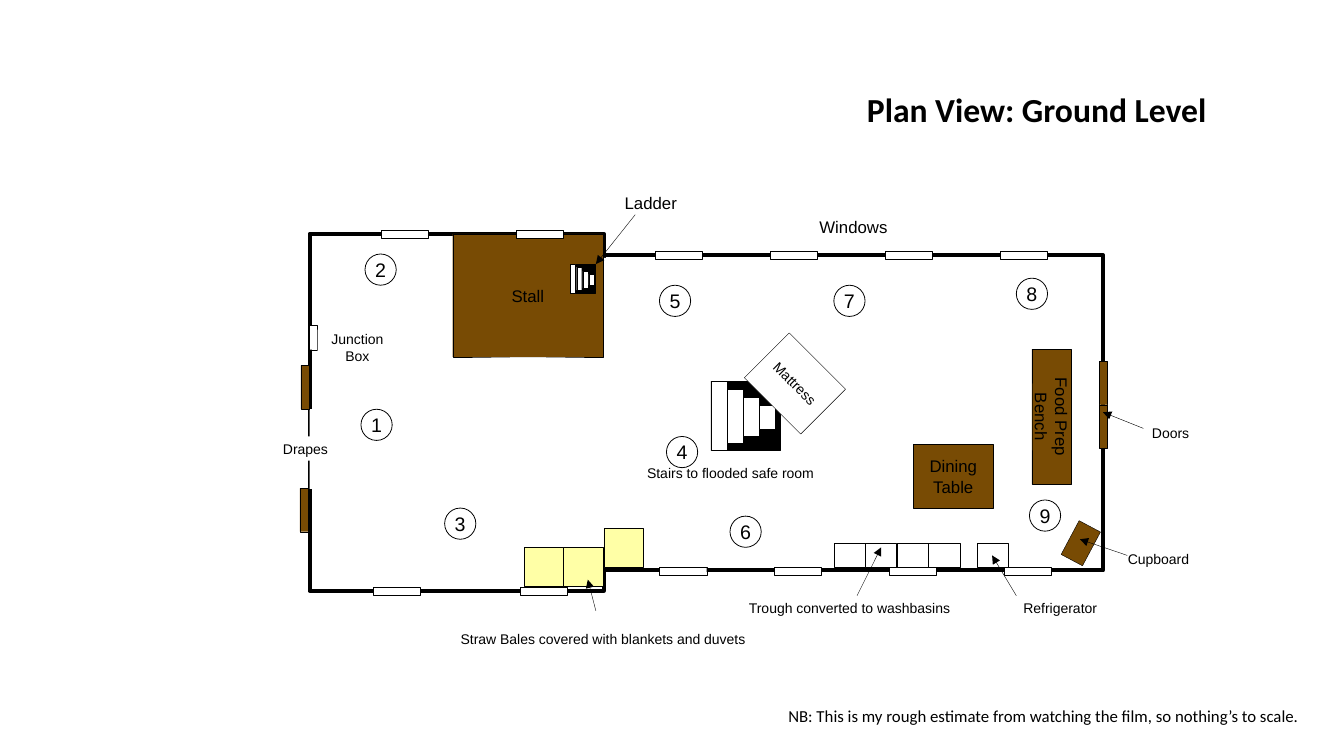
from pptx import Presentation
from pptx.dml.color import RGBColor
from pptx.enum.shapes import MSO_CONNECTOR as Connector, MSO_SHAPE as Shape
from pptx.enum.text import MSO_ANCHOR as Anchor, PP_ALIGN as Align
from pptx.oxml.ns import qn
from pptx.util import Emu, Pt
from lxml.etree import SubElement

PX = 9144
BLACK, WHITE, WOOD, STRAW = "000000", "FFFFFF", "784B04", "FFFFA6"


def px(value):
    return Emu(value * PX)


def color(code):
    return RGBColor.from_string(code)


class FloorPlan:
    hairline = 0.28
    label_font = "Arial"
    caption_font = "Calibri"

    def __init__(self, page):
        self.page = page
        self.canvas = page.shapes

    def fill_text(self, shape, text, wrap=True, align=Align.CENTER, anchor=Anchor.MIDDLE, **font):
        frame = shape.text_frame
        insets = dict(margin_left=px(10), margin_right=px(10), margin_top=px(5), margin_bottom=px(5))
        for name, value in dict(word_wrap=wrap, vertical_anchor=anchor, **insets).items():
            setattr(frame, name, value)
        para = frame.paragraphs[0]
        para.alignment = align
        span = para.add_run()
        span.text = text
        for name, value in font.items():
            setattr(span.font, name, value)
        span.font.color.rgb = color(BLACK)

    def caption(self, left, top, width, height, text, size, bold=False):
        box = self.canvas.add_textbox(px(left), px(top), px(width), px(height))
        self.fill_text(box, text, False, Align.LEFT, Anchor.TOP,
                       name=self.caption_font, size=Pt(size), bold=bold)

    def block(self, left, top, width, height, fill=WHITE, line=hairline,
              rotation=0, text="", size=12, wrap=True, kind=Shape.RECTANGLE):
        shape = self.canvas.add_shape(kind, px(left), px(top), px(width), px(height))
        shape.shadow.inherit = False
        shape.rotation = rotation
        shape.fill.solid()
        shape.fill.fore_color.rgb = color(fill)
        if line:
            shape.line.color.rgb = color(BLACK)
            shape.line.width = Pt(line)
        else:
            shape.line.fill.background()
        if text:
            self.fill_text(shape, text, wrap, name=self.label_font, size=Pt(size))

    def label(self, left, top, width, text, size=10, height=24, wrap=False):
        self.block(left, top, width, height, line=0, text=text, size=size, wrap=wrap)

    def marker(self, number, left, top):
        self.block(left, top, 31, 31, line=0.57, text=str(number), size=14,
                   wrap=False, kind=Shape.OVAL)

    def arrow(self, *ends):
        pointer = self.canvas.add_connector(Connector.STRAIGHT, *map(px, ends))
        pointer.line.color.rgb = color(BLACK)
        pointer.line.width = Pt(self.hairline)
        properties = pointer._element.spPr
        SubElement(properties.find(qn("a:ln")), qn("a:tailEnd"), type="triangle")
        SubElement(properties, qn("a:effectLst"))

    def stairs(self, left, top, width, height, tread, pitch, shrink):
        self.canvas = self.page.shapes.add_group_shape().shapes
        self.block(left, top, width, height, BLACK)
        for step in range(4):
            self.block(left + step * pitch, top + step * (shrink + 1) // 2,
                       tread, height - step * shrink)
        self.canvas = self.page.shapes


def draw_building(plan):
    plan.block(599, 253, 495, 313, line=2.83)
    plan.block(307, 232, 292, 354, line=2.83)
    plan.block(594, 256, 8, 307, line=0)
    plan.block(307, 406, 8, 79, line=0)
    plan.block(307, 323, 8, 24)
    plan.block(449, 232, 149, 122, WOOD, text="Stall")
    window_rows = [(654, 563, 4, 114), (650, 249, 4, 114), (370, 583, 2, 146), (378, 228, 2, 134)]
    for left, top, count, pitch in window_rows:
        for index in range(count):
            plan.block(left + index * pitch, top, 47, 8)
    for left, top in [(1073, 376), (1073, 419), (280, 502), (281, 380)]:
        plan.block(left, top, 43, 8, WOOD, rotation=270)


def draw_furniture(plan):
    plan.block(1060, 520, 24, 38, WOOD, rotation=28)
    plan.block(906, 441, 79, 63, WOOD, text="Dining Table")
    plan.block(976, 394, 134, 39, WOOD, rotation=90, text="Food Prep Bench")
    plan.block(969, 539, 31, 24)
    for index in range(4):
        plan.block(827 + index * 63 // 2, 539, 31, 24)
    for left, top in [(599, 524), (559, 543), (520, 543)]:
        plan.block(left, top, 39, 39, STRAW)
    plan.stairs(705, 378, 69, 69, tread=16, pitch=16, shrink=15)
    plan.stairs(566, 262, 24, 29, tread=5, pitch=6, shrink=6)
    plan.block(749, 349, 79, 63, rotation=45, text="Mattress", size=10)


def draw_notes(plan):
    plan.label(760, 213, 173, "Windows", 12)
    plan.label(559, 189, 173, "Ladder", 12)
    plan.label(756, 591, 173, "Trough converted to washbasins")
    plan.label(965, 591, 173, "Refrigerator")
    plan.label(638, 457, 173, "Stairs to flooded safe room")
    plan.label(1102, 543, 94, "Cupboard")
    plan.label(1114, 417, 94, "Doors")
    plan.label(551, 622, 94, "Straw Bales covered with blankets and duvets")
    plan.label(248, 433, 110, "Drapes")
    plan.label(315, 327, 79, "Junction Box", height=35, wrap=True)
    arrows = [
        (850, 591, 874, 543), (1008, 591, 984, 551), (1118, 551, 1071, 535),
        (1134, 425, 1094, 409), (591, 606, 583, 575), (630, 213, 591, 262),
    ]
    for ends in arrows:
        plan.arrow(*ends)
    markers = [
        (358, 406), (362, 252), (441, 504), (661, 433), (654, 283),
        (724, 512), (827, 283), (1008, 276), (1021, 496),
    ]
    for number, place in enumerate(markers, 1):
        plan.marker(number, *place)


def main():
    deck = Presentation()
    deck.slide_width, deck.slide_height = px(1333), px(750)
    plan = FloorPlan(deck.slides.add_slide(deck.slide_layouts[6]))
    plan.caption(850, 83, 362, 50, "Plan View: Ground Level", 24, bold=True)
    plan.caption(772, 695, 543, 37,
                 "NB: This is my rough estimate from watching the film, so nothing’s to scale.", 12)
    draw_building(plan)
    draw_furniture(plan)
    draw_notes(plan)
    deck.save("out.pptx")


if __name__ == "__main__":
    main()
